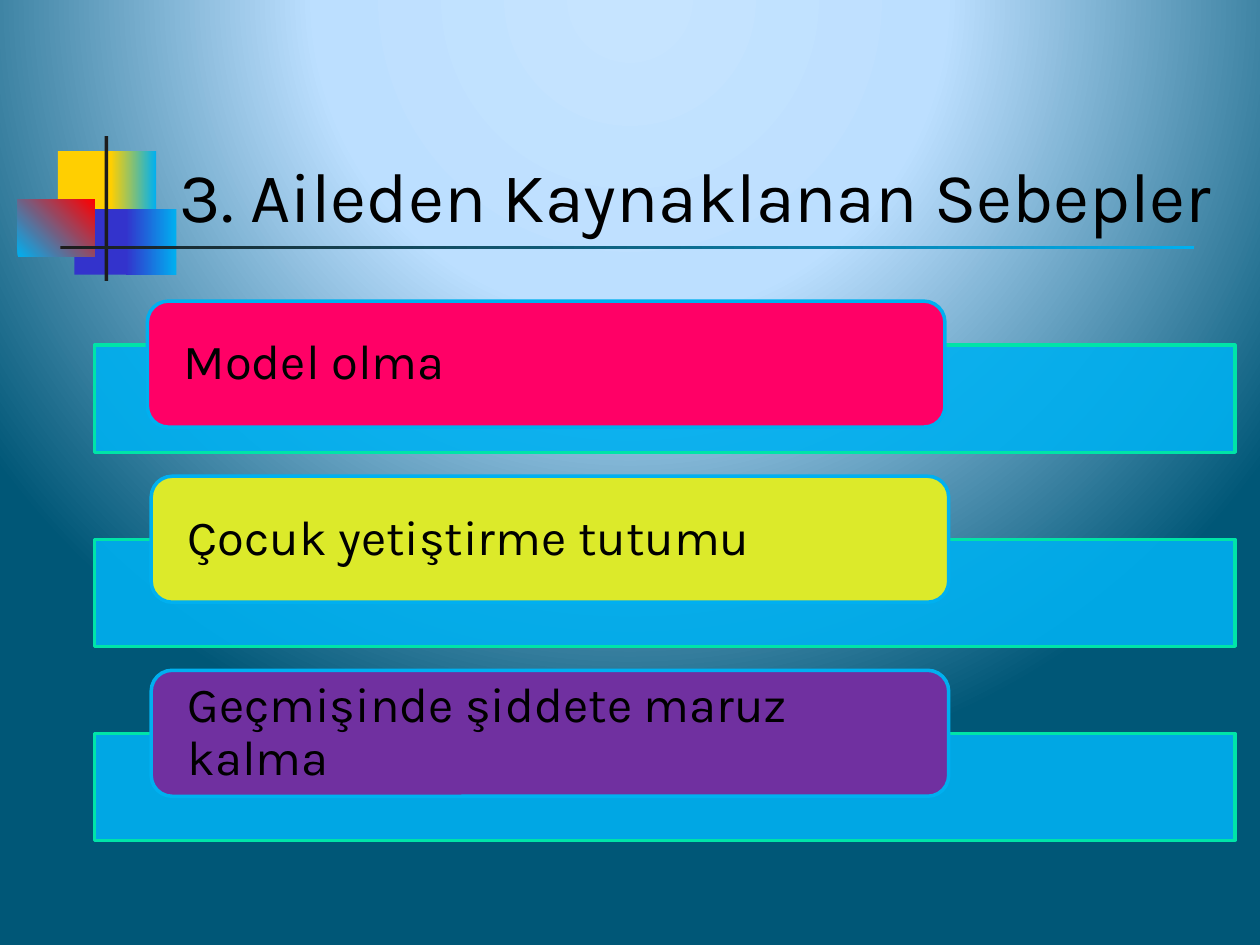
from pptx import Presentation
from pptx.dml.color import RGBColor
from pptx.enum.shapes import MSO_SHAPE as Shape
from pptx.enum.text import MSO_ANCHOR as Anchor, MSO_AUTO_SIZE as AutoSize, PP_ALIGN as Align
from pptx.oxml import parse_xml
from pptx.oxml.ns import nsdecls, qn
from pptx.util import Inches, Pt

FONT = "Karla"
BLACK = RGBColor(0x00, 0x00, 0x00)
CHARCOAL = RGBColor(0x1C, 0x1C, 0x1C)
SKY = RGBColor(0x00, 0xB0, 0xF0)
GREEN = RGBColor(0x00, 0xE4, 0xA8)
GOLD = RGBColor(0xFF, 0xCF, 0x01)
INDIGO = RGBColor(0x33, 0x33, 0xCC)
RED = RGBColor(0xFF, 0x00, 0x00)
PINK = RGBColor(0xFF, 0x00, 0x66)
LIME = RGBColor(0xDC, 0xEA, 0x2A)
PURPLE = RGBColor(0x70, 0x30, 0xA0)

TITLE = "3. Aileden Kaynaklanan Sebepler"
BACKGROUND_STOPS = [(0, "C6E4FF"), (40, "BCDFFF"), (100, "005777")]

# (left, top, width, height), colours from start to end, counter-clockwise angle
ORNAMENT = [
    ((0.46, 1.2, 0.48, 0.52), [GOLD], 0),
    ((0.88, 1.2, 0.36, 0.52), [GOLD, SKY], 0),
    ((0.59, 1.66, 0.46, 0.52), [INDIGO], 0),
    ((1, 1.66, 0.4, 0.52), [INDIGO, SKY], 0),
    ((0.14, 1.58, 0.61, 0.46), [SKY, RED], 45),
    ((0.83, 1.08, 0.03, 1.15), [CHARCOAL], 0),
    ((0.48, 1.95, 9, 0.03), [CHARCOAL, SKY], 0),
]

# text, label colour, label left, label top
CAUSES = [
    ("Model olma", PINK, 1.17, 2.39),
    ("Çocuk yetiştirme tutumu", LIME, 1.2, 3.78),
    ("Geçmişinde şiddete maruz kalma", PURPLE, 1.2, 5.32),
]
BAR_TOP, BAR_PITCH = 2.74, 1.54


def set_values(target, values):
    for name, value in values.items():
        setattr(target, name, value)


def paint_background(slide):
    """Fill the background with a circular gradient centred above the slide."""
    fill = slide.background.fill
    fill.gradient()
    stops = "".join(
        f'<a:gs pos="{position * 1000}"><a:srgbClr val="{color}"/></a:gs>'
        for position, color in BACKGROUND_STOPS
    )
    gradient = parse_xml(
        f'<a:gradFill {nsdecls("a")} rotWithShape="1"><a:gsLst>{stops}</a:gsLst>'
        '<a:path path="circle"><a:fillToRect l="50000" t="-80000" r="50000" b="180000"/>'
        "</a:path></a:gradFill>"
    )
    default = next(slide.background._cSld.iter(qn("a:gradFill")))
    default.getparent().replace(default, gradient)


def add_block(slide, kind, box, colors, angle=0, line=None):
    shape = slide.shapes.add_shape(kind, *map(Inches, box))
    shape.shadow.inherit = False
    if len(colors) == 1:
        shape.fill.solid()
        shape.fill.fore_color.rgb = colors[0]
    else:
        shape.fill.gradient()
        shape.fill.gradient_angle = angle
        for stop, color in zip(shape.fill.gradient_stops, colors):
            stop.color.rgb = color
    if line is None:
        shape.line.fill.background()
    else:
        shape.line.color.rgb = line
        shape.line.width = Pt(2)
    return shape


def write_text(shape, text, size, alignment, frame_values):
    frame = shape.text_frame
    set_values(frame, {"text": text, "word_wrap": True, "auto_size": AutoSize.NONE, **frame_values})
    paragraph = frame.paragraphs[0]
    paragraph.alignment = alignment
    font = paragraph.runs[0].font
    set_values(font, {"name": FONT, "size": Pt(size)})
    font.color.rgb = BLACK
    return paragraph


def add_cause(slide, index, text, color, left, top):
    bar_box = (0.75, BAR_TOP + index * BAR_PITCH, 9.05, 0.85)
    bar = add_block(slide, Shape.RECTANGLE, bar_box, [SKY], line=GREEN)
    bar_color = next(bar.fill._xPr.iter(qn("a:srgbClr")))
    bar_color.append(parse_xml(f'<a:alpha {nsdecls("a")} val="90000"/>'))

    label = add_block(slide, Shape.ROUNDED_RECTANGLE, (left, top, 6.33, 1), [color], line=SKY)
    paragraph = write_text(label, text, 28, Align.LEFT, {
        "vertical_anchor": Anchor.MIDDLE,
        "margin_left": Inches(0.24), "margin_right": Inches(0.24),
        "margin_top": 0, "margin_bottom": 0,
    })
    paragraph.line_spacing = 0.9


def main():
    presentation = Presentation()
    set_values(presentation, {"slide_width": Inches(10), "slide_height": Inches(7.5)})
    slide = presentation.slides.add_slide(presentation.slide_layouts[5])
    paint_background(slide)

    for box, colors, angle in ORNAMENT:
        add_block(slide, Shape.RECTANGLE, box, colors, angle)

    title = slide.shapes.title
    set_values(title, {"left": Inches(1.26), "top": Inches(0.68),
                       "width": Inches(8.52), "height": Inches(1.25)})
    write_text(title, TITLE, 40, Align.CENTER, {"vertical_anchor": Anchor.BOTTOM})

    for index, cause in enumerate(CAUSES):
        add_cause(slide, index, *cause)

    presentation.save("out.pptx")


if __name__ == "__main__":
    main()
